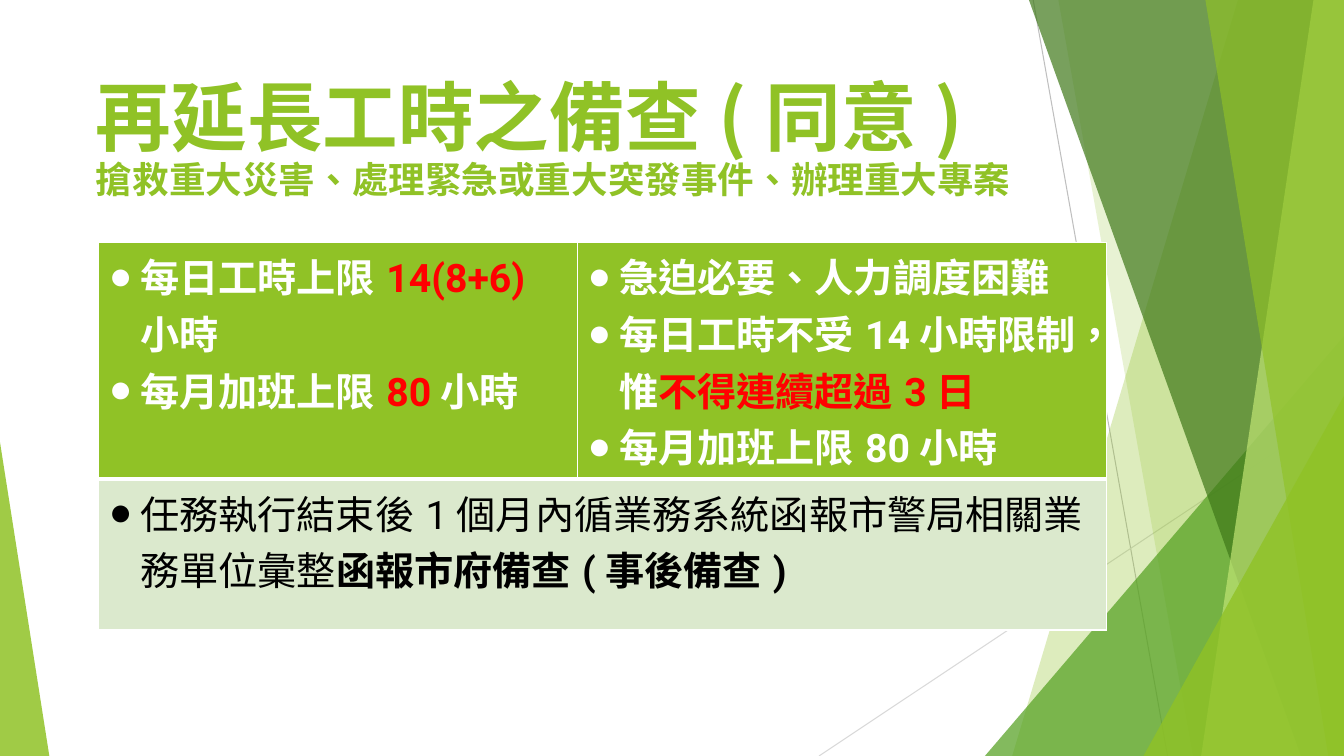
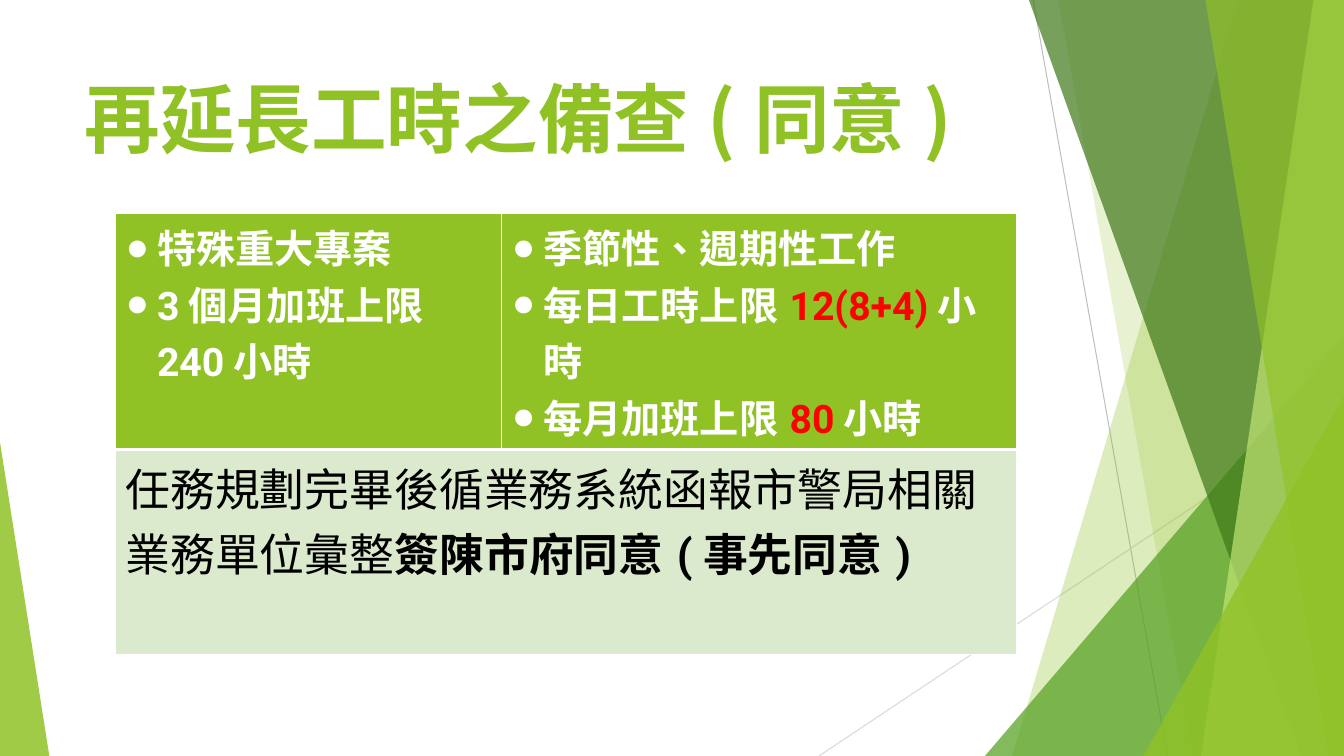
from dataclasses import dataclass

from lxml import etree
from pptx import Presentation, util as u
from pptx.dml.color import RGBColor
from pptx.enum import shapes, text
from pptx.oxml import ns

PX = 9525
WIDTH, HEIGHT = 1280, 720


@dataclass(frozen=True)
class Theme:
    lime: str = "90C226"
    green: str = "54A021"
    forest: str = "3F7819"
    pale_lime: str = "C0E474"
    tint: str = "DBE9CD"
    white: str = "FFFFFF"
    black: str = "000000"
    red: str = "FF0000"
    face: str = "Roboto"
    cjk_face: str = "Noto Sans CJK SC"
    subtitle_face: str = "Arial"
    title_size: int = 54
    subtitle_size: float = 26.1
    body_size: int = 28
    large_size: int = 32
    bullet_indent: int = 30


T = Theme()

# Thin lines: start, end, colour
RULES = [((984, 0), (1112, HEIGHT), "BFBFBF"), ((WIDTH, 387), (780, HEIGHT), "D9D9D9")]
# Facets back to front. Band: left edge at top and bottom; triangle: box and apex
FACETS = [
    ("band", (1179, 964), T.lime, 30),
    ("band", (1008, 1136), T.lime, 20),
    ("triangle", (938, 320, 342, 400, 1), T.green, 72),
    ("band", (980, 1239), T.forest, 70),
    ("band", (1251, 1144), T.pale_lime, 70),
    ("band", (1148, 1265), T.lime, 65),
    ("triangle", (1089, 377, 191, 343, 1), T.lime, 80),
    ("triangle", (0, 421, 47, 299, 0), T.lime, 85),
]

# A paragraph is a list of runs; a tuple is an emphasised run
SLIDES = [
    dict(
        title="再延長工時之備查(同意)",
        subtitle="搶救重大災害、處理緊急或重大突發事件、辦理重大專案",
        title_box=(82, 62, 930, 151),
        table_at=(94, 231), columns=(456, 504), rows=(225, 144),
        conditions=[
            [["每日工時上限", ("14(8+6)",), "小時"],
             ["每月加班上限", ("80",), "小時"]],
            [["急迫必要、人力調度困難"],
             ["每日工時不受14小時限制，惟", ("不得連續超過3日",)],
             ["每月加班上限80小時"]],
        ],
        procedure=["任務執行結束後1個月內循業務系統函報市警局相關業務單位彙整",
                   ("函報市府備查(事後備查)",)],
        procedure_size=T.body_size, procedure_bullet=True,
    ),
    dict(
        title="再延長工時之備查(同意)",
        subtitle=None,
        title_box=(71, 64, 902, 138),
        table_at=(110, 203), columns=(368, 490), rows=(225, 195),
        conditions=[
            [["特殊重大專案"], ["3個月加班上限240小時"]],
            [["季節性、週期性工作"],
             ["每日工時上限", ("12(8+4)",), "小時"],
             ["每月加班上限", ("80",), "小時"]],
        ],
        procedure=["任務規劃完畢後循業務系統函報市警局相關業務單位彙整",
                   ("簽陳市府同意(事先同意)",)],
        procedure_size=T.large_size, procedure_bullet=False,
    ),
]


def px(*lengths):
    return [u.Emu(length * PX) for length in lengths]


def rgb(colour):
    return RGBColor.from_string(colour)


def add(parent, tag, **attributes):
    return etree.SubElement(parent, ns.qn(tag), attributes)


def style_paragraph(paragraph, face, size, colour, bold):
    font = paragraph.font
    font.name, font.size, font.bold = face, u.Pt(size), bold
    font.color.rgb = rgb(colour)
    properties = paragraph._p.pPr.find(ns.qn("a:defRPr"))
    properties.set("lang", "zh-TW")
    add(properties, "a:ea", typeface=T.cjk_face)


def add_bullet(paragraph):
    properties = paragraph._p.get_or_add_pPr()
    indent = T.bullet_indent * PX
    properties.set("marL", str(indent))
    properties.set("indent", str(-indent))
    add(properties, "a:buFont", typeface="Arial")
    add(properties, "a:buChar", char="●")


def write_runs(paragraph, runs, emphasis):
    for part in runs:
        run = paragraph.add_run()
        run.text = part if isinstance(part, str) else part[0]
        run._r.get_or_add_rPr().set("lang", "zh-TW")
        if not isinstance(part, str):
            run.font.bold = True
            run.font.color.rgb = rgb(emphasis)


def draw_backdrop(slide):
    for start, end, colour in RULES:
        rule = slide.shapes.add_connector(shapes.MSO_CONNECTOR.STRAIGHT, *px(*start, *end))
        rule.line.color.rgb = rgb(colour)
        rule.line.width = u.Pt(0.75)
        add(rule._element.spPr, "a:effectLst")
    for kind, geometry, colour, opacity in FACETS:
        if kind == "band":
            top, bottom = geometry
            outline = slide.shapes.build_freeform(top, 0, scale=PX)
            outline.add_line_segments([(WIDTH, 0), (WIDTH, HEIGHT), (bottom, HEIGHT)])
            facet = outline.convert_to_shape()
        else:
            *box, apex = geometry
            facet = slide.shapes.add_shape(shapes.MSO_SHAPE.ISOSCELES_TRIANGLE, *px(*box))
            facet.adjustments[0] = apex
        facet.shadow.inherit = False
        facet.line.fill.background()
        facet.fill.solid()
        facet.fill.fore_color.rgb = rgb(colour)
        tone = next(facet._element.spPr.iter(ns.qn("a:srgbClr")))
        add(tone, "a:alpha", val=str(opacity * 1000))


def add_title(slide, content):
    frame = slide.shapes.add_textbox(*px(*content["title_box"])).text_frame
    frame.word_wrap = True
    frame.vertical_anchor = text.MSO_ANCHOR.TOP
    title = frame.paragraphs[0]
    lines = [(title, content["title"], T.cjk_face, T.title_size, 1.0)]
    if content["subtitle"]:
        lines.append((frame.add_paragraph(), content["subtitle"],
                      T.subtitle_face, T.subtitle_size, 0.92))
    for paragraph, words, face, size, spacing in lines:
        paragraph.line_spacing = spacing
        style_paragraph(paragraph, face, size, T.lime, True)
        write_runs(paragraph, [words], T.lime)


def dress_cell(cell, fill, top, bottom):
    """Fill the cell and give it white borders; top and bottom are in points."""
    properties = cell._tc.get_or_add_tcPr()
    for side, points in (("L", 1), ("R", 1), ("T", top), ("B", bottom)):
        border = add(properties, f"a:ln{side}", w=str(u.Pt(points)))
        add(add(border, "a:solidFill"), "a:srgbClr", val=T.white)
    cell.fill.solid()
    cell.fill.fore_color.rgb = rgb(fill)


def write_cell(cell, paragraphs, size, colour, bold, emphasis, bullet):
    for i, runs in enumerate(paragraphs):
        frame = cell.text_frame
        paragraph = frame.add_paragraph() if i else frame.paragraphs[0]
        if bullet:
            add_bullet(paragraph)
        style_paragraph(paragraph, T.face, size, colour, bold)
        write_runs(paragraph, runs, emphasis)


def add_rules_table(slide, content):
    columns, rows = content["columns"], content["rows"]
    table = slide.shapes.add_table(
        len(rows), len(columns),
        *px(*content["table_at"], sum(columns), sum(rows))).table
    table.first_row = table.horz_banding = False
    for column, width in zip(table.columns, px(*columns)):
        column.width = width
    for row, height in zip(table.rows, px(*rows)):
        row.height = height
    for i, paragraphs in enumerate(content["conditions"]):
        dress_cell(table.cell(0, i), T.lime, 1, 3)
        dress_cell(table.cell(1, i), T.tint, 3, 1)
        write_cell(table.cell(0, i), paragraphs, T.body_size, T.white, True, T.red, True)
    procedure = table.cell(1, 0)
    procedure.merge(table.cell(1, len(columns) - 1))
    write_cell(procedure, [content["procedure"]], content["procedure_size"],
               T.black, False, T.black, content["procedure_bullet"])


def main():
    deck = Presentation()
    deck.slide_width, deck.slide_height = px(WIDTH, HEIGHT)
    for content in SLIDES:
        slide = deck.slides.add_slide(deck.slide_layouts[6])
        draw_backdrop(slide)
        add_title(slide, content)
        add_rules_table(slide, content)
    deck.save("out.pptx")


if __name__ == "__main__":
    main()
